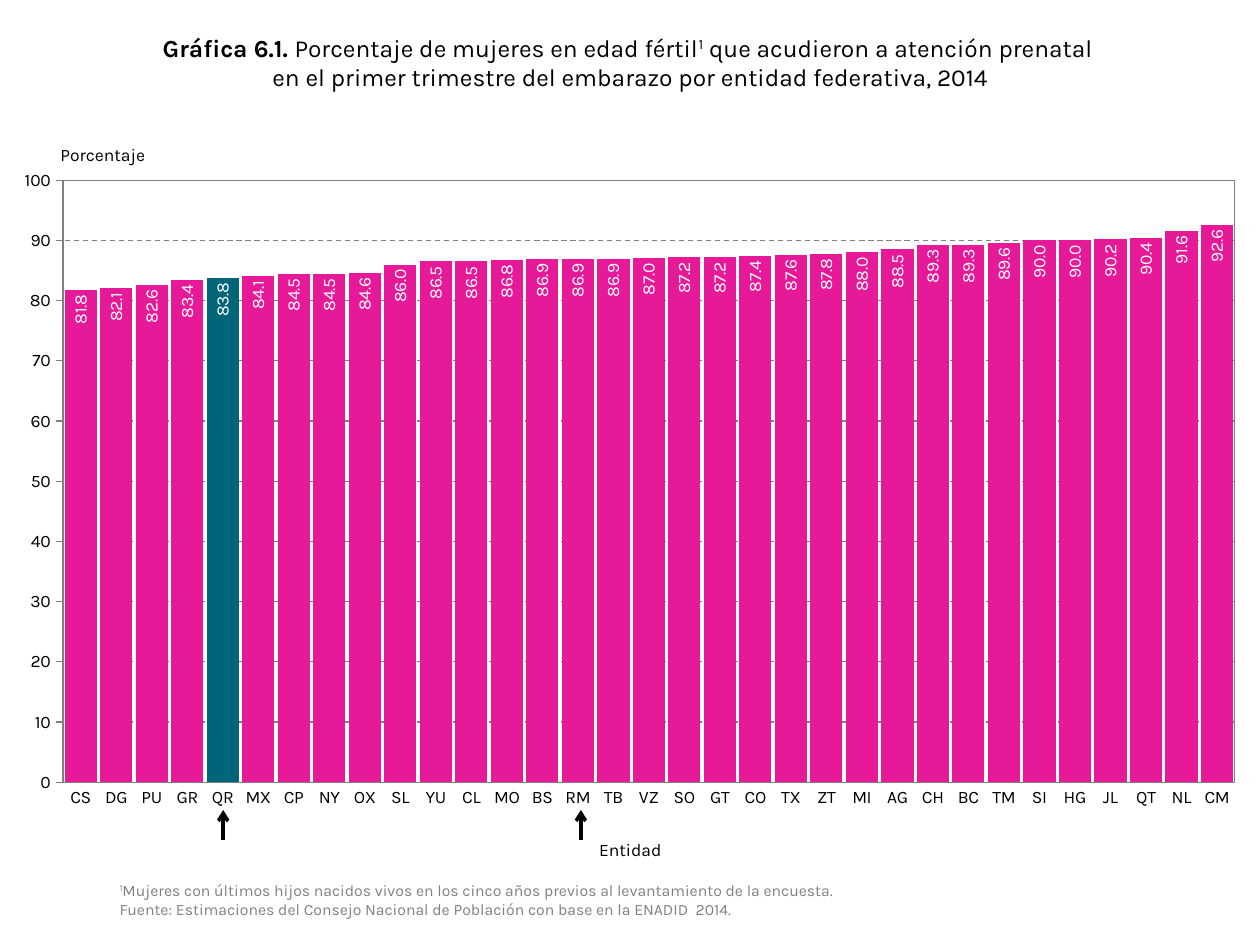
from dataclasses import dataclass
from pptx import Presentation
from pptx.chart.data import CategoryChartData as ChartData
from pptx.dml.color import RGBColor
from pptx.enum.chart import XL_CHART_TYPE as Kind, XL_LABEL_POSITION as Spot, XL_TICK_MARK as Tick
from pptx.enum.dml import MSO_LINE as Dash
from pptx.enum.shapes import MSO_CONNECTOR as Link
from pptx.enum.text import MSO_ANCHOR as Anchor, PP_ALIGN as Align
from pptx.oxml import parse_xml
from pptx.oxml.ns import nsdecls
from pptx.util import Cm, Pt

FONT = "Karla"
BLACK = RGBColor(0, 0, 0)
WHITE = RGBColor(255, 255, 255)
GREY = RGBColor(0x80, 0x80, 0x80)
PINK = RGBColor(0xE6, 0x19, 0x98)
TEAL = RGBColor(0x00, 0x65, 0x78)

RATES = [
    ("CS", 81.8), ("DG", 82.1), ("PU", 82.6), ("GR", 83.4), ("QR", 83.8), ("MX", 84.1),
    ("CP", 84.5), ("NY", 84.5), ("OX", 84.6), ("SL", 86.0), ("YU", 86.5), ("CL", 86.5),
    ("MO", 86.8), ("BS", 86.9), ("RM", 86.9), ("TB", 86.9), ("VZ", 87.0), ("SO", 87.2),
    ("GT", 87.2), ("CO", 87.4), ("TX", 87.6), ("ZT", 87.8), ("MI", 88.0), ("AG", 88.5),
    ("CH", 89.3), ("BC", 89.3), ("TM", 89.6), ("SI", 90.0), ("HG", 90.0), ("JL", 90.2),
    ("QT", 90.4), ("NL", 91.6), ("CM", 92.6),
]
FOCUS = "QR"


@dataclass
class Box:
    left: float
    top: float
    width: float
    height: float

    def area(self) -> tuple:
        return Cm(self.left), Cm(self.top), Cm(self.width), Cm(self.height)


@dataclass
class Part:
    text: str
    bold: bool = False
    raised: bool = False
    ends: bool = False


@dataclass
class Note:
    box: Box
    lines: list[list[Part]]
    size: int = 10
    color: RGBColor = BLACK
    align: Align = Align.LEFT
    anchor: Anchor = Anchor.TOP


NOTES = [
    Note(Box(2.11, 0.53, 21.21, 1.45), [[
        Part("Gráfica 6.1. ", bold=True),
        Part("Porcentaje de mujeres en edad fértil"),
        Part("1", raised=True),
        Part(" que acudieron a atención prenatal ", ends=True),
        Part("en el primer trimestre del embarazo por entidad federativa, 2014"),
    ]], 14, align=Align.CENTER, anchor=Anchor.MIDDLE),
    Note(Box(0.97, 2.77, 4.8, 0.69), [[Part("Porcentaje")]]),
    Note(Box(2.16, 17.63, 22.2, 1.02), [
        [Part("1", raised=True),
         Part("Mujeres con últimos hijos nacidos vivos en los cinco años previos "
              "al levantamiento de la encuesta.")],
        [Part("Fuente: Estimaciones del Consejo Nacional de Población con base "
              "en la ENADID  2014.")],
    ], 9, GREY),
    Note(Box(11.23, 16.79, 2.95, 0.69), [[Part("Entidad")]], align=Align.CENTER),
]


def add_note(slide, note: Note) -> None:
    frame = slide.shapes.add_textbox(*note.box.area()).text_frame
    frame.word_wrap = True
    frame.vertical_anchor = note.anchor
    for i, line in enumerate(note.lines):
        para = frame.add_paragraph() if i else frame.paragraphs[0]
        para.alignment = note.align
        for part in line:
            run = para.add_run()
            run.text = part.text
            font = run.font
            font.name, font.size, font.bold = FONT, Pt(note.size), part.bold
            font.color.rgb = note.color
            if part.raised:
                run._r.get_or_add_rPr().set("baseline", "30000")
            if part.ends:
                para.add_line_break()


def paint(line) -> None:
    line.color.rgb = GREY
    line.width = Pt(0.75)


def frame_plot(chart, left: float, top: float, width: float, height: float) -> None:
    plot = chart._chartSpace.chart.plotArea
    for old in plot.xpath("c:layout"):
        plot.remove(old)
    spots = "".join(f'<c:{key} val="{val}"/>' for key, val in
                    [("x", left), ("y", top), ("w", width), ("h", height)])
    plot.insert(0, parse_xml(
        f'<c:layout {nsdecls("c")}><c:manualLayout><c:layoutTarget val="inner"/>'
        f'<c:xMode val="edge"/><c:yMode val="edge"/>{spots}</c:manualLayout></c:layout>'))
    plot.append(parse_xml(
        f'<c:spPr {nsdecls("c", "a")}><a:noFill/><a:ln w="9525"><a:solidFill>'
        f'<a:srgbClr val="{GREY}"/></a:solidFill></a:ln></c:spPr>'))


def add_bars(slide, box: Box) -> None:
    names = [name for name, _ in RATES]
    data = ChartData()
    data.categories = names
    data.add_series("Porcentaje", [rate for _, rate in RATES])
    chart = slide.shapes.add_chart(Kind.COLUMN_CLUSTERED, *box.area(), data).chart
    chart.has_legend = chart.has_title = False
    chart.font.name, chart.font.size = FONT, Pt(10)
    chart.font.color.rgb = BLACK

    base = chart.category_axis
    base.major_tick_mark = Tick.NONE
    paint(base.format.line)
    scale = chart.value_axis
    scale.minimum_scale, scale.maximum_scale, scale.major_unit = 0, 100, 10
    scale.major_tick_mark = Tick.OUTSIDE
    scale.tick_labels.number_format = "0"
    scale.tick_labels.number_format_is_linked = False
    paint(scale.format.line)
    grid = scale.major_gridlines.format.line
    paint(grid)
    grid.dash_style = Dash.DASH

    plot = chart.plots[0]
    plot.gap_width = 10
    plot.vary_by_categories = False
    bars = plot.series[0]
    for item, color in [(bars, PINK), (bars.points[names.index(FOCUS)], TEAL)]:
        item.format.fill.solid()
        item.format.fill.fore_color.rgb = color
    tags = bars.data_labels
    tags.show_value = True
    tags.position = Spot.INSIDE_END
    tags.number_format = "0.0"
    tags.number_format_is_linked = False
    tags.font.name, tags.font.size = FONT, Pt(10)
    tags.font.color.rgb = WHITE
    body = tags._element.xpath("c:txPr/a:bodyPr")[0]
    body.set("rot", "-5400000")
    body.set("vert", "horz")
    frame_plot(chart, 0.05, 0.04, 0.93, 0.91)


def add_arrow(slide, left: float, low: float, high: float) -> None:
    arrow = slide.shapes.add_connector(Link.STRAIGHT, Cm(left), Cm(low), Cm(left), Cm(high))
    arrow.line.color.rgb = BLACK
    arrow.line.width = Pt(2)
    arrow.line._get_or_add_ln().append(parse_xml(f'<a:tailEnd {nsdecls("a")} type="arrow"/>'))
    arrow._element.spPr.append(parse_xml(f'<a:effectLst {nsdecls("a")}/>'))


def main() -> None:
    deck = Presentation()
    deck.slide_width, deck.slide_height = Cm(25.4), Cm(19.05)
    slide = deck.slides.add_slide(deck.slide_layouts[6])
    add_bars(slide, Box(0, 3.1, 25.4, 13.34))
    for note in NOTES:
        add_note(slide, note)
    for left in (4.5, 11.71):
        add_arrow(slide, left, 16.94, 16.33)
    deck.save("out.pptx")


if __name__ == "__main__":
    main()
